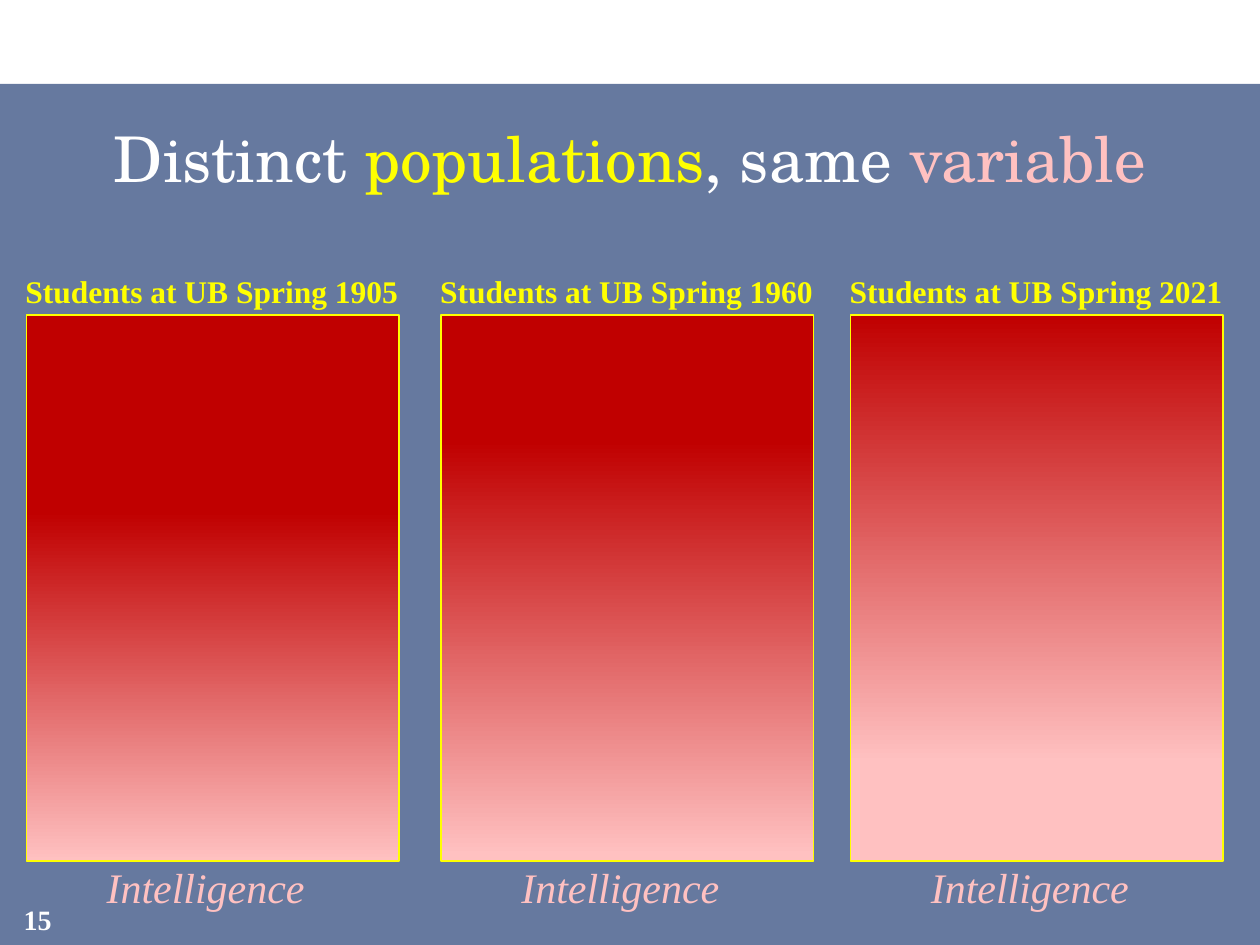
from dataclasses import dataclass

from lxml.etree import SubElement
from pptx import Presentation
from pptx.dml.color import RGBColor
from pptx.enum.shapes import MSO_SHAPE
from pptx.enum.text import MSO_ANCHOR, PP_ALIGN
from pptx.oxml.ns import qn
from pptx.util import Pt


@dataclass(frozen=True)
class Theme:
    backdrop: str = "002060"
    white: str = "FFFFFF"
    yellow: str = "FFFF00"
    pink: str = "FFC1C1"
    red: str = "C00000"
    title_font: str = "TeX Gyre Schola"
    body_font: str = "Times New Roman"
    title_size: int = 36
    variable_size: int = 24
    label_size: int = 18
    number_size: int = 16


THEME = Theme()
PANEL_TOP, PANEL_W, PANEL_H = 180, 213, 312

# Year, panel left, gradient start and end in percent
PANELS = [
    (1905, 15, 36, 100),
    (1960, 252, 23, 99),
    (2021, 486, 0, 82),
]


def add_text(slide, runs, x, y, w, h, size, font=THEME.body_font,
             bold=False, italic=False, wrap=True, anchor=MSO_ANCHOR.MIDDLE):
    """Add centred text from (text, colour) runs."""
    tf = slide.shapes.add_textbox(Pt(x), Pt(y), Pt(w), Pt(h)).text_frame
    tf.word_wrap = wrap
    tf.vertical_anchor = anchor
    p = tf.paragraphs[0]
    p.alignment = PP_ALIGN.CENTER
    for text, color in runs:
        r = p.add_run()
        r.text = text
        r.font.name = font
        r.font.size = Pt(size)
        r.font.bold = bold
        r.font.italic = italic
        r.font.color.rgb = RGBColor.from_string(color)


def add_rect(slide, x, y, w, h):
    s = slide.shapes.add_shape(MSO_SHAPE.RECTANGLE, Pt(x), Pt(y), Pt(w), Pt(h))
    s.shadow.inherit = False
    return s


def add_backdrop(slide):
    s = add_rect(slide, 0, 48, 720, 492)
    s.fill.solid()
    s.fill.fore_color.rgb = RGBColor.from_string(THEME.backdrop)
    s.line.fill.background()
    # 60 % opacity
    color = s.fill._xPr.find(qn("a:solidFill")).find(qn("a:srgbClr"))
    SubElement(color, qn("a:alpha")).set("val", "60000")


def add_panel(slide, year, x, start, end):
    """Add one population: gradient box, heading and variable name."""
    s = add_rect(slide, x, PANEL_TOP, PANEL_W, PANEL_H)
    s.fill.gradient()
    s.fill.gradient_angle = 270
    stops = zip(s.fill.gradient_stops, (start, end), (THEME.red, THEME.pink))
    for stop, percent, color in stops:
        stop.position = percent / 100
        stop.color.rgb = RGBColor.from_string(color)
    s.line.color.rgb = RGBColor.from_string(THEME.yellow)
    s.line.width = Pt(0.75)

    add_text(slide, [(f"Students at UB Spring {year}", THEME.yellow)],
             x - 9, PANEL_TOP - 28, 230, 29, THEME.label_size,
             bold=True, wrap=False, anchor=MSO_ANCHOR.TOP)
    add_text(slide, [("Intelligence", THEME.pink)],
             x + 38, PANEL_TOP + PANEL_H - 3, 129, 36, THEME.variable_size,
             italic=True, wrap=False, anchor=MSO_ANCHOR.TOP)


def main():
    prs = Presentation()
    prs.slide_width, prs.slide_height = Pt(720), Pt(540)
    slide = prs.slides.add_slide(prs.slide_layouts[6])

    # Background and slide number
    add_backdrop(slide)
    add_text(slide, [("15", THEME.white)], 0, 511, 43, 29,
             THEME.number_size, bold=True)

    # Title
    add_text(slide, [("Distinct ", THEME.white), ("populations", THEME.yellow),
                     (", same ", THEME.white), ("variable", THEME.pink)],
             0, 60, 720, 60, THEME.title_size, font=THEME.title_font)

    # Populations
    for panel in PANELS:
        add_panel(slide, *panel)

    prs.save("out.pptx")


if __name__ == "__main__":
    main()
